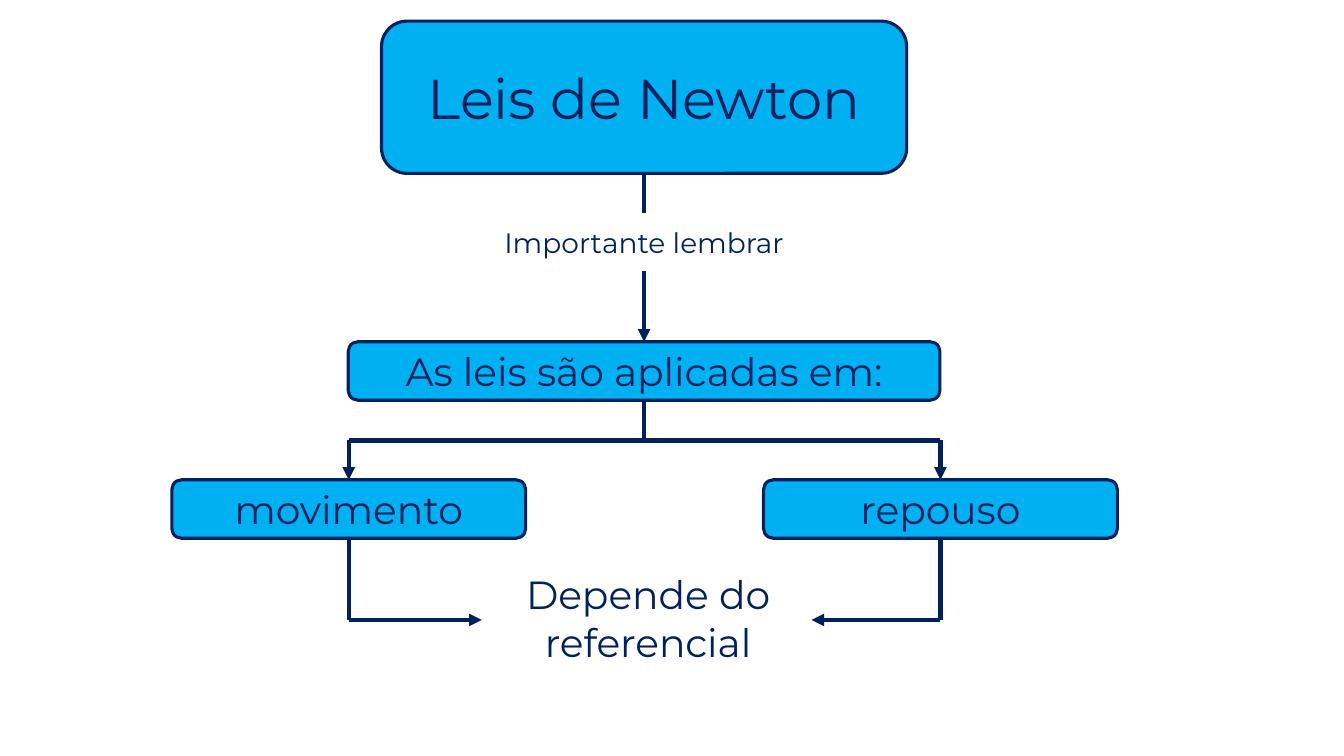
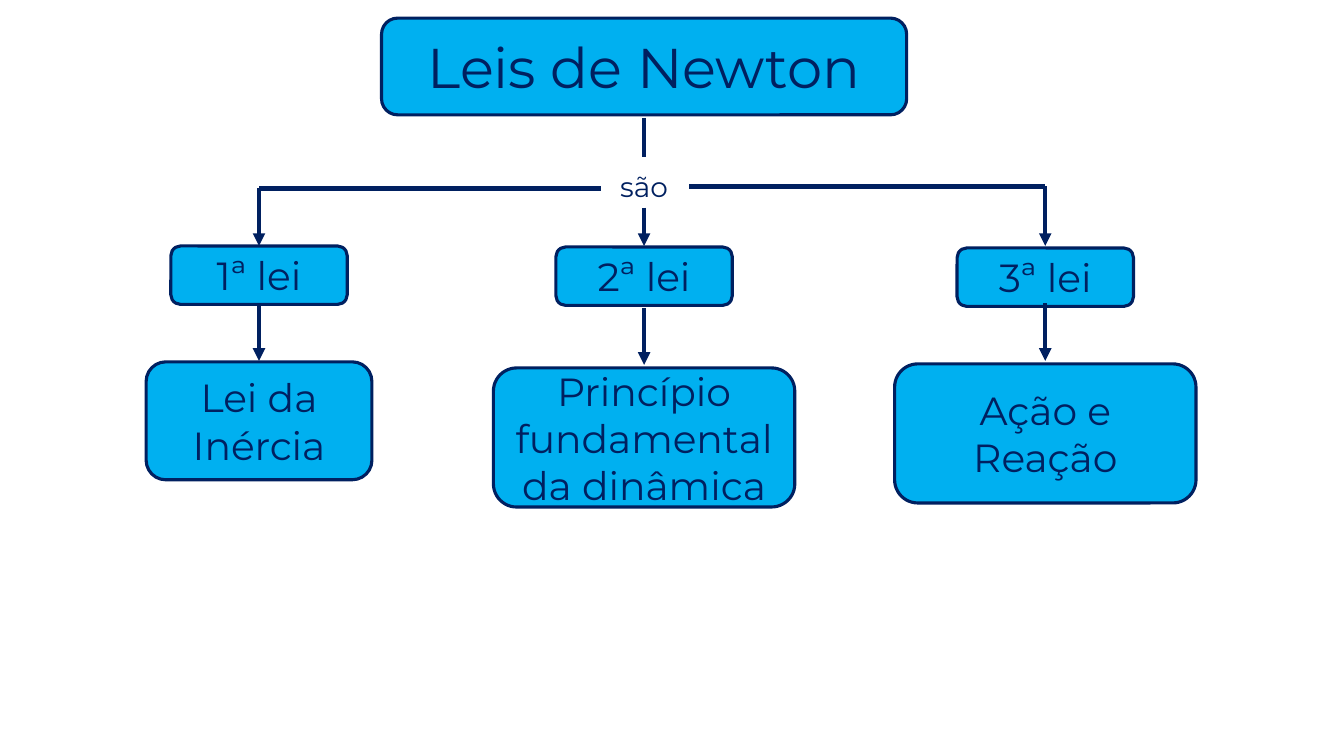
from itertools import pairwise

from lxml import etree
from pptx import Presentation
from pptx.dml.color import RGBColor
from pptx.enum.shapes import MSO_CONNECTOR, MSO_SHAPE
from pptx.enum.text import MSO_ANCHOR, PP_ALIGN
from pptx.oxml.ns import qn
from pptx.util import Emu, Pt

PX = 9144  # 100 px to the inch
NAVY, SKY = "002060", "00B0F0"
FONT = "Montserrat"
TITLE_SIZE, BODY_SIZE, LABEL_SIZE = 40, 28, 20
TITLE, TITLE_WIDTH = "Leis de Newton", 521
LABEL_WIDTH, ROW_HEIGHT = 323, 58
MIDDLE = 639

# Boxes and labels: text, centre x, top, width, height, text size
# Routes: points from start to end, arrowhead at the end
LEFT, RIGHT, FORK, RETURN = 346, 933, 437, 615
reference_map = {
    "boxes": [
        (TITLE, MIDDLE, 21, TITLE_WIDTH, 151, TITLE_SIZE),
        ("As leis são aplicadas em:", MIDDLE, 339, 587, ROW_HEIGHT, BODY_SIZE),
        ("movimento", LEFT, 476, 351, ROW_HEIGHT, BODY_SIZE),
        ("repouso", RIGHT, 476, 351, ROW_HEIGHT, BODY_SIZE),
    ],
    "labels": [
        ("Importante lembrar", MIDDLE, 211, LABEL_WIDTH, ROW_HEIGHT, LABEL_SIZE),
        ("Depende do referencial", 643, 546, LABEL_WIDTH, 134, BODY_SIZE),
    ],
    "routes": [
        ([(MIDDLE, 172), (MIDDLE, 211)], False),
        ([(MIDDLE, 269), (MIDDLE, 339)], True),
        ([(MIDDLE, 397), (MIDDLE, FORK)], False),
        ([(MIDDLE, FORK), (LEFT, FORK), (LEFT, 476)], True),
        ([(MIDDLE, FORK), (RIGHT, FORK), (RIGHT, 476)], True),
        ([(LEFT, 534), (LEFT, RETURN), (478, RETURN)], True),
        ([(RIGHT, 534), (RIGHT, RETURN), (805, RETURN)], True),
    ],
}

# Law, its top, name, its top, width, height, route to the law, route to the name
laws = [
    ("1ª lei", 244, "Lei da Inércia", 359, 224, 117,
     [(596, 187), (257, 187), (257, 244)], [(257, 301), (257, 358)]),
    ("2ª lei", 245, "Princípio fundamental da dinâmica", 365, 299, 138,
     [(MIDDLE, 206), (MIDDLE, 244)], [(MIDDLE, 306), (MIDDLE, 362)]),
    ("3ª lei", 246, "Ação e Reação", 361, 299, 138,
     [(684, 185), (1037, 185), (1037, 244)], [(1037, 301), (1037, 358)]),
]


def color(value):
    return RGBColor.from_string(value)


def build_laws_map():
    boxes = [(TITLE, MIDDLE, 18, TITLE_WIDTH, 96, TITLE_SIZE)]
    routes = [([(MIDDLE, 117), (MIDDLE, 156)], False)]
    for law, law_top, name, name_top, width, height, to_law, to_name in laws:
        center = to_law[-1][0]
        boxes.append((law, center, law_top, 175, ROW_HEIGHT, BODY_SIZE))
        boxes.append((name, center, name_top, width, height, BODY_SIZE))
        routes += [(to_law, True), (to_name, True)]
    label = ("são", MIDDLE, 156, LABEL_WIDTH, ROW_HEIGHT, LABEL_SIZE)
    return {"boxes": boxes, "labels": [label], "routes": routes}


def frame(center, top, width, height):
    """Turn a centred px frame into left, top, width and height in EMU."""
    return [Emu(int(value * PX)) for value in (center - width / 2, top, width, height)]


def write_text(shape, text, size):
    text_frame = shape.text_frame
    text_frame.word_wrap = True
    text_frame.vertical_anchor = MSO_ANCHOR.MIDDLE
    text_frame.text = text
    para = text_frame.paragraphs[0]
    para.alignment = PP_ALIGN.CENTER
    font = para.runs[0].font
    font.name, font.size = FONT, Pt(size)
    font.color.rgb = color(NAVY)


def add_box(page, text, center, top, width, height, size):
    box = page.shapes.add_shape(MSO_SHAPE.ROUNDED_RECTANGLE,
                                *frame(center, top, width, height))
    box.shadow.inherit = False
    box.fill.solid()
    box.fill.fore_color.rgb = color(SKY)
    box.line.color.rgb = color(NAVY)
    box.line.width = Pt(2.25)
    write_text(box, text, size)


def add_label(page, text, center, top, width, height, size):
    label = page.shapes.add_textbox(*frame(center, top, width, height))
    write_text(label, text, size)


def add_route(page, points, has_arrow):
    """Join the points with straight lines; the last may carry an arrowhead."""
    for start, end in pairwise(points):
        line = page.shapes.add_connector(
            MSO_CONNECTOR.STRAIGHT, *[Emu(value * PX) for value in start + end])
        line.line.color.rgb = color(NAVY)
        line.line.width = Pt(3)
        etree.SubElement(line._element.spPr, qn("a:effectLst"))
        if has_arrow and end == points[-1]:
            outline = line.line._get_or_add_ln()
            etree.SubElement(outline, qn("a:tailEnd"), type="triangle")


def main():
    deck = Presentation()
    deck.slide_width, deck.slide_height = Emu(12192000), Emu(6858000)
    for concept_map in (reference_map, build_laws_map()):
        page = deck.slides.add_slide(deck.slide_layouts[6])
        for box in concept_map["boxes"]:
            add_box(page, *box)
        for label in concept_map["labels"]:
            add_label(page, *label)
        for route in concept_map["routes"]:
            add_route(page, *route)
    deck.save("out.pptx")


if __name__ == "__main__":
    main()
